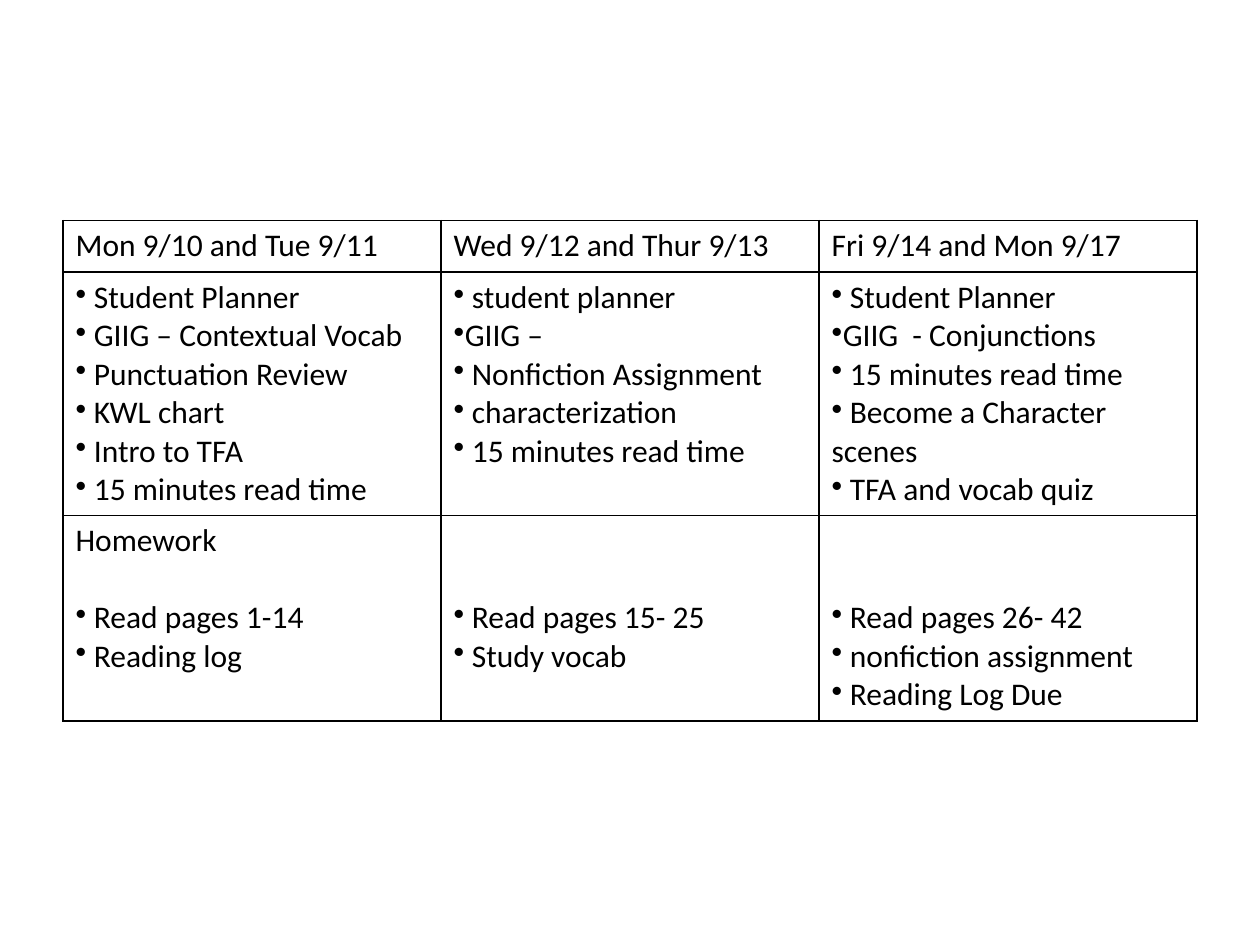
from lxml import etree
from pptx import Presentation
from pptx.dml.color import RGBColor
from pptx.oxml.ns import qn
from pptx.util import Inches, Pt

INK = {"text": "000000", "line": "000000"}
LINE = Pt(22)  # height of one line of text
PAD = Inches(0.05)
COL = Inches(3)
ROWS = [0.41, 1.93, 1.63]

heads = ["Mon 9/10 and Tue 9/11", "Wed 9/12 and Thur 9/13", "Fri 9/14 and Mon 9/17"]
plans = [
    [" Student Planner", " GIIG – Contextual Vocab", " Punctuation Review",
     " KWL chart", " Intro to TFA", " 15 minutes read time"],
    [" student planner", "GIIG –", " Nonfiction Assignment",
     " characterization", " 15 minutes read time"],
    [" Student Planner", "GIIG  - Conjunctions", " 15 minutes read time",
     " Become a Character scenes", " TFA and vocab quiz"],
]
tasks = [
    [" Read pages 1-14", " Reading log"],
    [" Read pages 15- 25", " Study vocab"],
    [" Read pages 26- 42", " nonfiction assignment", " Reading Log Due"],
]


def frame(cell):
    """Draw a thin line on all four sides of a cell."""
    props = cell._tc.get_or_add_tcPr()
    for spot, side in enumerate(("lnL", "lnR", "lnT", "lnB")):
        line = etree.Element(qn("a:" + side), w=str(Pt(1)))
        fill = etree.SubElement(line, qn("a:solidFill"))
        etree.SubElement(fill, qn("a:srgbClr"), val=INK["line"])
        props.insert(spot, line)


def write(cell, title, items):
    """Fill a cell with an optional title line and a bulleted list."""
    lines = ([title] if title else []) + items
    cell.text = "\n".join(lines)
    for para in cell.text_frame.paragraphs:
        para.font.name = "Calibri"
        para.font.size = Pt(18)
        para.font.color.rgb = RGBColor.from_string(INK["text"])
    for para in cell.text_frame.paragraphs[len(lines) - len(items):]:
        props = para._p.get_or_add_pPr()
        mark = etree.Element(qn("a:buChar"), char="•")
        props.insert_element_before(mark, "a:tabLst", "a:defRPr", "a:extLst")


deck = Presentation()
deck.slide_width, deck.slide_height = Inches(10), Inches(7.5)
slide = deck.slides.add_slide(deck.slide_layouts[6])

table = slide.shapes.add_table(
    3, 3, Inches(0.5), Inches(1.75), 3 * COL, Inches(sum(ROWS))).table
table.first_row = table.horz_banding = False
for row, high in zip(table.rows, ROWS):
    row.height = Inches(high)

for col in range(3):
    table.columns[col].width = COL
    head, plan, task = [table.cell(row, col) for row in range(3)]
    for cell in (head, plan, task):
        cell.fill.background()
        cell.margin_top = PAD
        frame(cell)
    write(head, heads[col], [])
    write(plan, "", plans[col])
    write(task, "" if col else "Homework", tasks[col])
    # All homework lists start two lines down
    if col:
        task.margin_top = PAD + 2 * LINE
    else:
        task.text_frame.paragraphs[1].space_before = LINE

deck.save("out.pptx")
